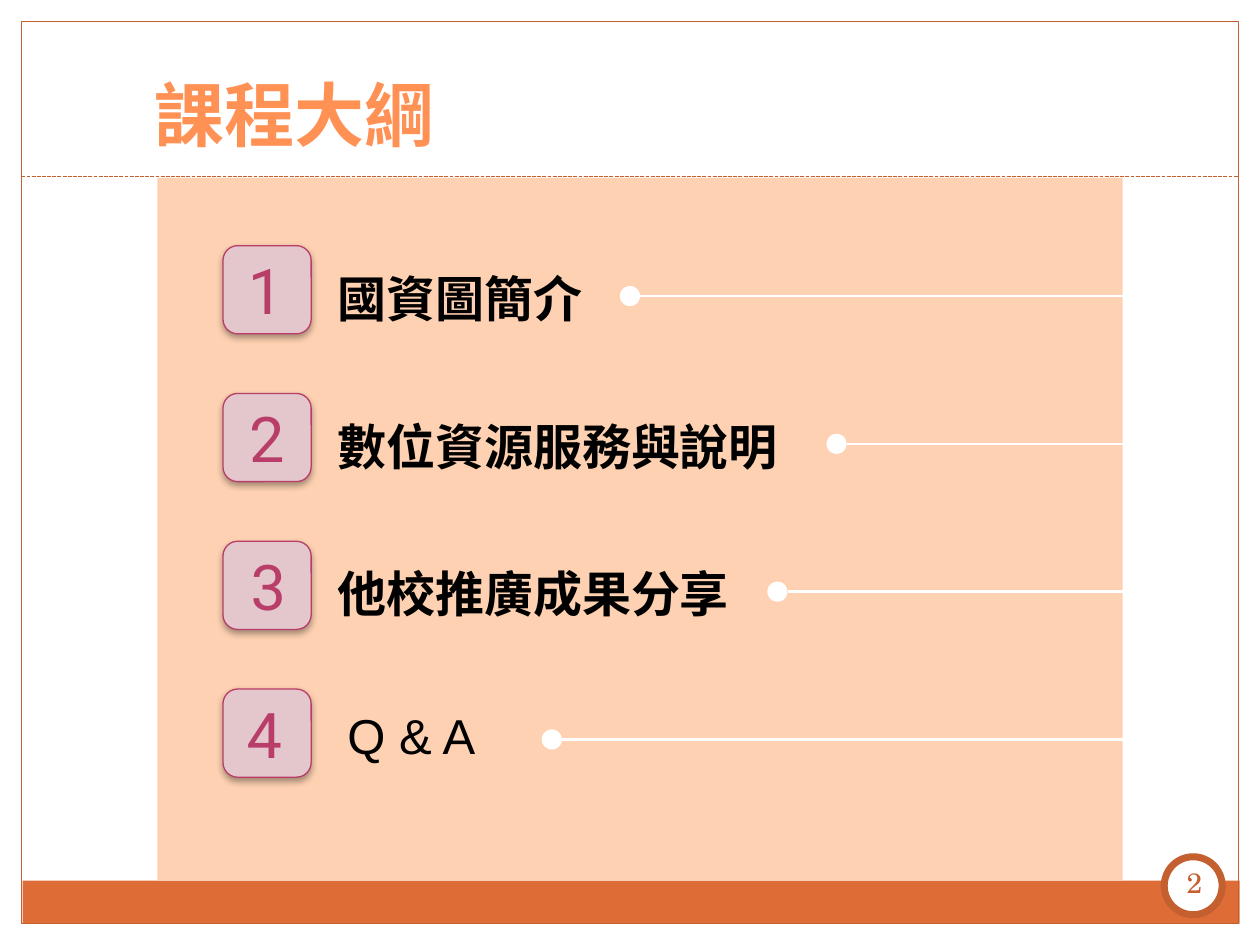
import pptx
import pptx.util
from lxml import etree
from pptx.dml.color import RGBColor
from pptx.enum.dml import MSO_LINE
from pptx.enum.shapes import MSO_CONNECTOR, MSO_SHAPE
from pptx.enum.text import MSO_ANCHOR, MSO_AUTO_SIZE, PP_ALIGN
from pptx.oxml import parse_xml
from pptx.oxml.ns import qn
from pptx.util import Inches, Pt

TITLE = "課程大綱"
PAGE_NUMBER = "2"
# topic, bold, text left, text width, dot left, digit left
TOPICS = [
    ("國資圖簡介", True, 2.58, 2.17, 4.92, 1.87),
    ("數位資源服務與說明", True, 2.58, 3.98, 6.56, 1.88),
    ("他校推廣成果分享", True, 2.58, 3.52, 6.09, 1.89),
    ("Q & A", False, 2.66, 1.64, 4.3, 1.86),
]

WHITE = RGBColor(0xFF, 0xFF, 0xFF)
BLACK = RGBColor(0, 0, 0)
ORANGE = RGBColor(0xDE, 0x6C, 0x36)
RUST = RGBColor(0xC4, 0x5F, 0x30)
PEACH = RGBColor(0xFD, 0xD1, 0xB1)
TITLE_ORANGE = RGBColor(0xFF, 0x91, 0x54)
PINK = RGBColor(0xE3, 0xC7, 0xCD)
BERRY = RGBColor(0xB8, 0x3D, 0x68)

PANEL_RIGHT = 8.91
FIRST_ROW, ROW_STEP = 1.95, 1.173
BADGE, DOT = 0.7, 0.16

BADGE_SHADOW = (
    '<a:effectLst xmlns:a="http://schemas.openxmlformats.org/drawingml/2006/main">'
    f'<a:outerShdw blurRad="{Pt(4)}" dist="{Pt(2)}" dir="5400000" rotWithShape="0">'
    '<a:srgbClr val="000000"><a:alpha val="35000"/></a:srgbClr>'
    "</a:outerShdw></a:effectLst>"
)

prs = pptx.Presentation()
prs.slide_width, prs.slide_height = Inches(10), Inches(7.5)
slide = prs.slides.add_slide(prs.slide_layouts[5])


def add_box(kind, left, top, width, height, fill=None, line=None, weight=0.75):
    box = slide.shapes.add_shape(
        kind, Inches(left), Inches(top), Inches(width), Inches(height))
    box.shadow.inherit = False
    if fill is None:
        box.fill.background()
    else:
        box.fill.solid()
        box.fill.fore_color.rgb = fill
    if line is None:
        box.line.fill.background()
    else:
        box.line.color.rgb = line
        box.line.width = Pt(weight)
    return box


def add_rule(left, right, y, color, weight):
    rule = slide.shapes.add_connector(
        MSO_CONNECTOR.STRAIGHT, Inches(left), Inches(y), Inches(right), Inches(y))
    rule.line.color.rgb = color
    rule.line.width = Pt(weight)
    etree.SubElement(rule._element.spPr, qn("a:effectLst"))
    return rule


def write(frame, text, size, font, color, bold=False, align=PP_ALIGN.LEFT):
    paragraph = frame.paragraphs[0]
    paragraph.alignment = align
    run = paragraph.add_run()
    run.text = text
    run.font.size = Pt(size)
    run.font.name = font
    run.font.bold = bold
    run.font.color.rgb = color


def add_label(left, top, width, height, wrap, *style):
    frame = slide.shapes.add_textbox(
        Inches(left), Inches(top), Inches(width), Inches(height)).text_frame
    frame.word_wrap = wrap
    frame.auto_size = MSO_AUTO_SIZE.SHAPE_TO_FIT_TEXT
    write(frame, *style)


# Page frame
add_box(MSO_SHAPE.RECTANGLE, 0.18, 6.99, 9.66, 0.34, ORANGE)
add_box(MSO_SHAPE.RECTANGLE, 0.17, 0.17, 9.66, 7.16, line=RUST)
add_rule(0.17, 9.83, 1.4, RUST, 0.75).line.dash_style = MSO_LINE.SQUARE_DOT
add_box(MSO_SHAPE.OVAL, 9.24, 6.8, 0.46, 0.46, WHITE, RUST, 4)
add_box(MSO_SHAPE.RECTANGLE, 1.25, 1.41, 7.66, 5.58, PEACH)

title = slide.shapes.title
title.left, title.top = Inches(1.09), Inches(0.47)
title.width, title.height = Inches(2.5), Inches(0.86)
title.text_frame.vertical_anchor = MSO_ANCHOR.MIDDLE
title.text_frame.auto_size = MSO_AUTO_SIZE.NONE
write(title.text_frame, TITLE, 40, "Arial", TITLE_ORANGE, True, PP_ALIGN.CENTER)

page = slide.shapes.add_textbox(
    Inches(9.23), Inches(6.76), Inches(0.5), Inches(0.48)).text_frame
page.word_wrap = True
page.vertical_anchor = MSO_ANCHOR.MIDDLE
page.margin_left = page.margin_right = Inches(0.05)
page.margin_top = page.margin_bottom = Inches(0.05)
write(page, PAGE_NUMBER, 16, "TeX Gyre Schola", RUST, align=PP_ALIGN.CENTER)

# Topics
for row, (topic, bold, text_left, text_width, dot_left, digit_left) in enumerate(TOPICS):
    top = FIRST_ROW + row * ROW_STEP
    middle = top + 0.4
    badge = add_box(MSO_SHAPE.ROUNDED_RECTANGLE, 1.77, top, BADGE, BADGE, PINK, BERRY)
    properties = badge._element.spPr
    properties.replace(properties.find(qn("a:effectLst")), parse_xml(BADGE_SHADOW))
    add_label(digit_left, top, 0.64, 0.71, False, str(row + 1), 36, "Roboto", BERRY)
    text_top = top + (0.13 if bold else 0.08)
    add_label(text_left, text_top, text_width, 0.57, row > 0,
              topic, 28, "Arial", BLACK, bold)
    add_box(MSO_SHAPE.OVAL, dot_left, middle - DOT / 2, DOT, DOT, WHITE)
    add_rule(dot_left + DOT, PANEL_RIGHT, middle, WHITE, 1.5)

prs.save("out.pptx")
